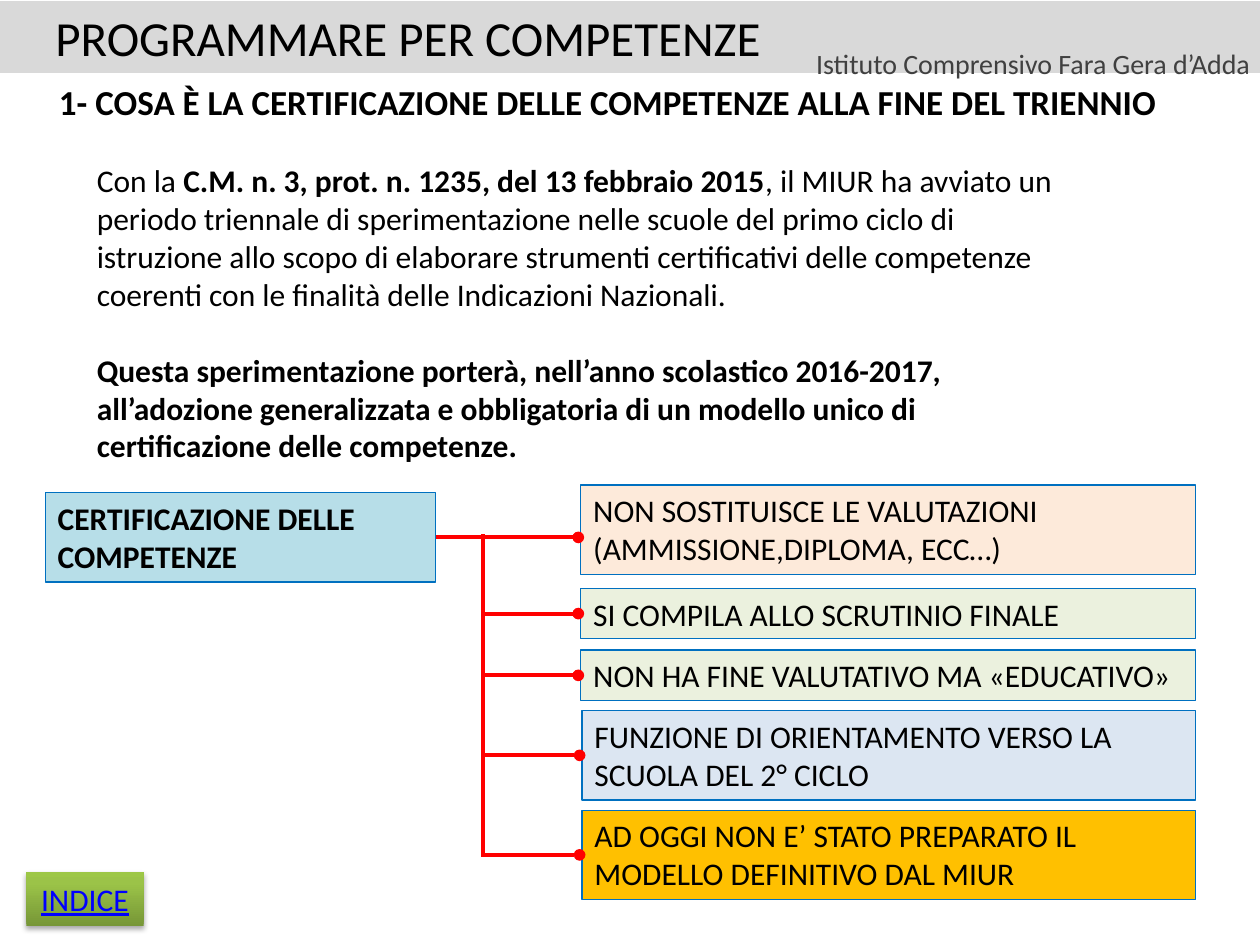
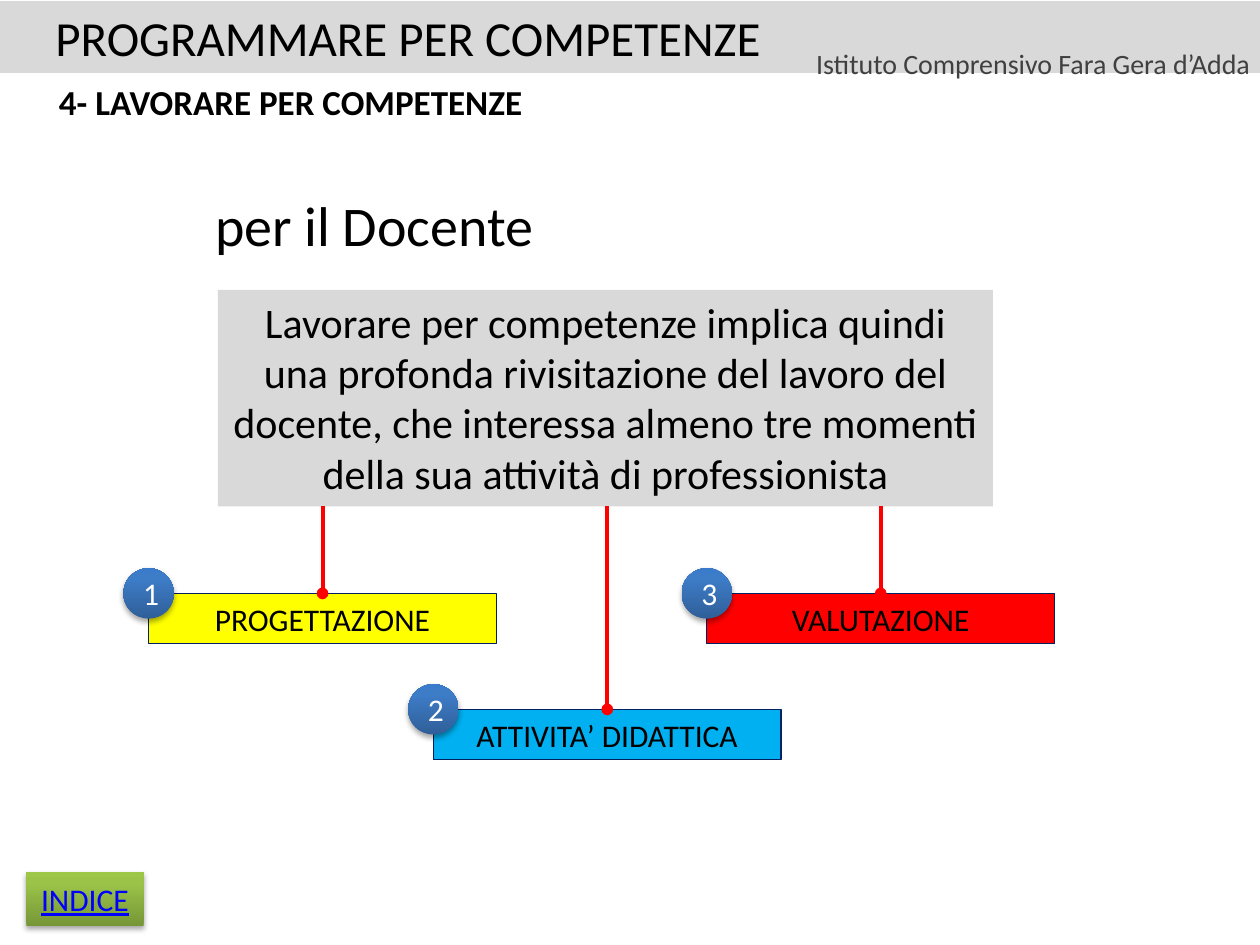
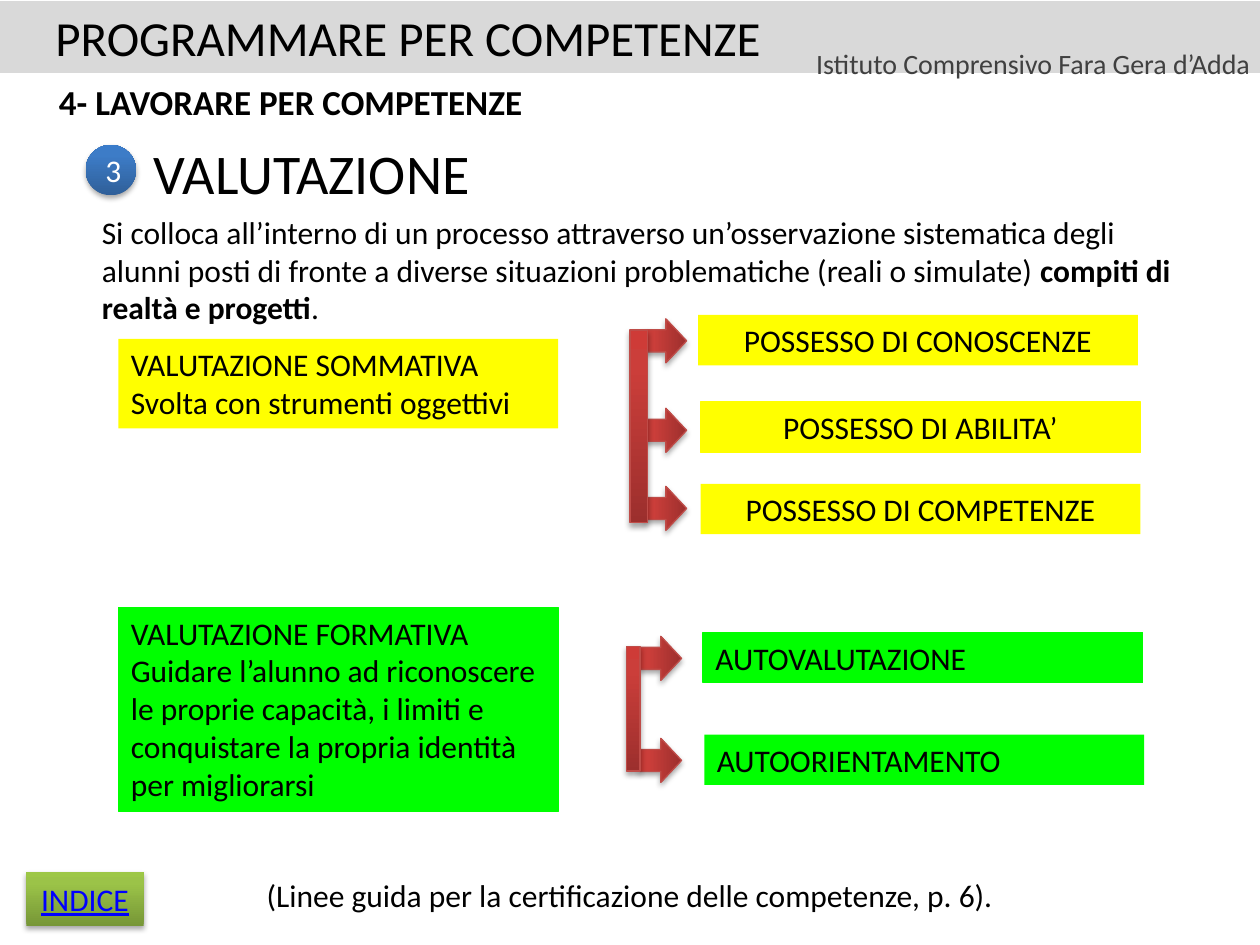
from dataclasses import dataclass, replace
from typing import Optional

from lxml import etree
from pptx import Presentation
from pptx import util as u
from pptx.dml.color import RGBColor
from pptx.enum import shapes, text
from pptx.oxml import ns

FONT = "Calibri"
COLORS = {
    "black": "000000", "white": "FFFFFF", "grey": "D9D9D9", "dark_grey": "404040",
    "light_blue": "B7DEE8", "pale_blue": "DCE6F2", "pale_green": "EBF1DE",
    "pale_orange": "FDEADA", "amber": "FFC000", "yellow": "FFFF00", "red": "FF0000",
    "sky": "00B0F0", "green": "00FF00", "blue": "0070C0", "navy": "002060",
    "link": "0000FF", "brick": "BF4C48",
}
GRADIENTS = {
    "index": {0: "779737", 80: "9BC348", 100: "9DC746"},
    "badge": {0: "2F5F99", 80: "3D7CC7", 100: "3A7CCB"},
    "arrow": {0: "9C2F2D", 80: "CB3E3A", 100: "CE3B37"},
}
LEFT, CENTER = text.PP_ALIGN.LEFT, text.PP_ALIGN.CENTER
TOP, MIDDLE = text.MSO_ANCHOR.TOP, text.MSO_ANCHOR.MIDDLE
KIND = shapes.MSO_SHAPE


@dataclass(frozen=True)
class Box:
    """A rectangle in inches; ** in the words switches bold on and off."""
    x: float
    y: float
    w: float
    h: float
    words: str = ""
    fill: Optional[str] = None
    line: Optional[str] = None
    align: text.PP_ALIGN = LEFT
    anchor: text.MSO_ANCHOR = TOP
    size: int = 18
    color: str = "black"
    underline: bool = False
    before: float = 0
    after: float = 0
    kind: shapes.MSO_SHAPE = KIND.RECTANGLE
    rotation: int = 0

    @property
    def frame(self) -> list:
        return [u.Inches(v) for v in (self.x, self.y, self.w, self.h)]

    @property
    def mid_x(self) -> float:
        return self.x + self.w / 2

    @property
    def mid_y(self) -> float:
        return self.y + self.h / 2


BAND = Box(0, 0.01, 10, 0.57, fill="grey")
TITLE = Box(0.34, 0.01, 5.86, 0.57, "PROGRAMMARE PER COMPETENZE", size=28)
SCHOOL = Box(6.24, 0.32, 3.92, 0.32, "Istituto Comprensivo Fara Gera d’Adda",
             align=CENTER, size=16, color="dark_grey", before=3.2)
SECTION = Box(0.37, 0.59, 9.43, 0.44, size=20)
INDEX = Box(0.21, 6.92, 0.93, 0.43, "INDICE", "index", align=CENTER, anchor=MIDDLE,
            color="link", underline=True)
WORKING = "4- LAVORARE PER COMPETENZE"


def rgb(name: str) -> RGBColor:
    return RGBColor.from_string(COLORS[name])


def write(tf, box: Box) -> None:
    tf.word_wrap = True
    tf.vertical_anchor = box.anchor
    for i, content in enumerate(box.words.split("\n")):
        p = tf.paragraphs[0] if i == 0 else tf.add_paragraph()
        form = {"alignment": box.align, "space_before": u.Pt(box.before),
                "space_after": u.Pt(box.after)}
        for key, value in form.items():
            setattr(p, key, value)
        for j, part in enumerate(content.split("**")):
            if not part:
                continue
            r = p.add_run()
            r.text = part
            form = {"name": FONT, "size": u.Pt(box.size), "bold": j % 2 == 1,
                    "underline": box.underline}
            for key, value in form.items():
                setattr(r.font, key, value)
            r.font.color.rgb = rgb(box.color)


def shade(sp, stops: dict) -> None:
    """Fill with an upward gradient and cast a soft shadow."""
    sp.fill.gradient()
    sp.fill.gradient_angle = 90
    gs_list = sp.element.find(".//" + ns.qn("a:gsLst"))
    for old in list(gs_list):
        gs_list.remove(old)
    for pos, value in stops.items():
        gs = etree.SubElement(gs_list, ns.qn("a:gs"), pos=str(pos * 1000))
        etree.SubElement(gs, ns.qn("a:srgbClr"), val=value)
    effects = sp.element.find(".//" + ns.qn("a:effectLst"))
    shadow = etree.SubElement(effects, ns.qn("a:outerShdw"), blurRad="40000",
                              dist="23000", dir="5400000", rotWithShape="0")
    color = etree.SubElement(shadow, ns.qn("a:srgbClr"), val=COLORS["black"])
    etree.SubElement(color, ns.qn("a:alpha"), val="35000")


def draw(s, box: Box):
    if box.fill is None:
        sp = s.shapes.add_textbox(*box.frame)
    else:
        sp = s.shapes.add_shape(box.kind, *box.frame)
        sp.shadow.inherit = False
        sp.rotation = box.rotation
        if box.fill in GRADIENTS:
            shade(sp, GRADIENTS[box.fill])
        else:
            sp.fill.solid()
            sp.fill.fore_color.rgb = rgb(box.fill)
        if box.line:
            sp.line.color.rgb = rgb(box.line)
            sp.line.width = u.Pt(0.75)
        else:
            sp.line.fill.background()
    if box.words:
        write(sp.text_frame, box)
    return sp


def connect(s, x1: float, y1: float, x2: float, y2: float, dot: bool = True) -> None:
    ends = [u.Inches(v) for v in (x1, y1, x2, y2)]
    cx = s.shapes.add_connector(shapes.MSO_CONNECTOR.STRAIGHT, *ends)
    cx.line.color.rgb = rgb("red")
    cx.line.width = u.Pt(2.25)
    props = cx.element.find(ns.qn("p:spPr"))
    if dot:
        etree.SubElement(props.find(ns.qn("a:ln")), ns.qn("a:tailEnd"), type="oval")
    etree.SubElement(props, ns.qn("a:effectLst"))


def badge(s, number: int, x: float, y: float) -> None:
    draw(s, Box(x, y, 0.4, 0.4, str(number), "badge", align=CENTER, anchor=MIDDLE,
                color="white", kind=KIND.OVAL))


def bracket(s, bar: Box, arrow_x: float, arrow_tops: list) -> None:
    """A vertical bar with an arrow to the right at each given height."""
    for y in arrow_tops:
        draw(s, Box(arrow_x, y, 0.35, 0.33, fill="arrow", line="brick",
                    kind=KIND.DOWN_ARROW, rotation=270))
    draw(s, bar)


def start_slide(prs, section: str):
    s = prs.slides.add_slide(prs.slide_layouts[5])
    title = s.shapes.title
    title.left, title.top, title.width, title.height = TITLE.frame
    write(title.text_frame, TITLE)
    title.text_frame.word_wrap = False
    title.text_frame.auto_size = text.MSO_AUTO_SIZE.NONE
    title.element.addprevious(draw(s, BAND).element)
    draw(s, SCHOOL)
    draw(s, replace(SECTION, words=f"**{section}**"))
    draw(s, INDEX)
    return s


def certification_slide(prs) -> None:
    s = start_slide(prs, "1- COSA È LA CERTIFICAZIONE DELLE COMPETENZE ALLA FINE DEL TRIENNIO")
    draw(s, Box(0.67, 1.23, 7.87, 2.52,
                "Con la **C.M. n. 3, prot. n. 1235, del 13 febbraio 2015**, il MIUR ha avviato "
                "un periodo triennale di sperimentazione nelle scuole del primo ciclo di "
                "istruzione allo scopo di elaborare strumenti certificativi delle competenze "
                "coerenti con le finalità delle Indicazioni Nazionali.\n"
                "**Questa sperimentazione porterà, nell’anno scolastico 2016-2017, all’adozione "
                "generalizzata e obbligatoria di un modello unico di certificazione delle "
                "competenze.**", after=22))
    topic = Box(0.36, 3.91, 3.1, 0.71, "**CERTIFICAZIONE DELLE COMPETENZE**",
                "light_blue", "blue")
    draw(s, topic)
    features = [
        Box(4.61, 3.85, 4.88, 0.71, "NON SOSTITUISCE LE VALUTAZIONI (AMMISSIONE,DIPLOMA, ECC…)",
            "pale_orange", "blue"),
        Box(4.61, 4.67, 4.88, 0.4, "SI COMPILA ALLO SCRUTINIO FINALE", "pale_green", "blue"),
        Box(4.61, 5.16, 4.88, 0.4, "NON HA FINE VALUTATIVO MA «EDUCATIVO»",
            "pale_green", "blue"),
        Box(4.62, 5.64, 4.87, 0.71, "FUNZIONE DI ORIENTAMENTO VERSO LA SCUOLA DEL 2° CICLO",
            "pale_blue", "blue"),
        Box(4.62, 6.43, 4.87, 0.71,
            "AD OGGI NON E’ STATO PREPARATO IL MODELLO DEFINITIVO DAL MIUR", "amber", "blue"),
    ]
    trunk_x = 3.83
    for i, feature in enumerate(features):
        draw(s, feature)
        x, y = (trunk_x, feature.mid_y) if i else (topic.x + topic.w, topic.mid_y)
        connect(s, x, y, feature.x - 0.02, y)
    connect(s, trunk_x, 6.8, trunk_x, 4.24, dot=False)


def teacher_slide(prs) -> None:
    s = start_slide(prs, WORKING)
    draw(s, Box(1.61, 1.46, 4.45, 0.64, "per il Docente", size=32))
    premise = Box(1.73, 2.3, 6.15, 1.72,
                  "Lavorare per competenze implica quindi una profonda rivisitazione del lavoro "
                  "del docente, che interessa almeno tre momenti della sua attività di "
                  "professionista", "grey", align=CENTER, size=24)
    draw(s, premise)
    steps = [(1.18, 4.71, "PROGETTAZIONE", "yellow"),
             (3.44, 5.63, "ATTIVITA’ DIDATTICA", "sky"),
             (5.61, 4.71, "VALUTAZIONE", "red")]
    for number, (x, y, label, fill) in enumerate(steps, 1):
        step = Box(x, y, 2.76, 0.4, label, fill, "navy", CENTER)
        draw(s, step)
        connect(s, step.mid_x, premise.y + premise.h, step.mid_x, y)
        badge(s, number, x - 0.2, y - 0.2)


def assessment_slide(prs) -> None:
    s = start_slide(prs, WORKING)
    badge(s, 3, 0.68, 1.15)
    boxes = [
        Box(1.12, 1.05, 3.41, 0.64, "VALUTAZIONE", size=32),
        Box(0.71, 1.64, 8.74, 1.01,
            "Si colloca all’interno di un processo attraverso un’osservazione sistematica degli "
            "alunni posti di fronte a diverse situazioni problematiche (reali o simulate) "
            "**compiti di realtà e progetti**."),
        Box(0.94, 2.69, 3.49, 0.71, "VALUTAZIONE SOMMATIVA\nSvolta con strumenti oggettivi",
            "yellow"),
        Box(5.54, 2.5, 3.49, 0.4, "POSSESSO DI CONOSCENZE", "yellow", align=CENTER),
        Box(5.56, 3.19, 3.49, 0.4, "POSSESSO DI ABILITA’", "yellow", "yellow", CENTER),
        Box(5.56, 3.84, 3.49, 0.4, "POSSESSO DI COMPETENZE", "yellow", align=CENTER),
        Box(0.94, 4.82, 3.49, 1.62,
            "VALUTAZIONE FORMATIVA\nGuidare l’alunno ad riconoscere le proprie capacità, i "
            "limiti e conquistare la propria identità per migliorarsi", "green", "green"),
        Box(5.58, 5.02, 3.49, 0.4, "AUTOVALUTAZIONE", "green", "green"),
        Box(5.59, 5.83, 3.49, 0.4, "AUTOORIENTAMENTO", "green"),
        Box(0, 6.9, 10, 0.4, "(Linee guida per la certificazione delle competenze, p. 6).",
            align=CENTER),
    ]
    for box in boxes:
        draw(s, box)
    bracket(s, Box(5, 2.62, 0.14, 1.53, fill="arrow", line="brick"), 5.11, [2.54, 3.25, 3.87])
    bracket(s, Box(4.97, 5.13, 0.11, 0.99, fill="arrow", line="brick"), 5.07, [5.06, 5.87])


def main() -> None:
    prs = Presentation()
    prs.slide_width, prs.slide_height = u.Inches(10), u.Inches(7.5)
    certification_slide(prs)
    teacher_slide(prs)
    assessment_slide(prs)
    prs.save("out.pptx")


if __name__ == "__main__":
    main()
